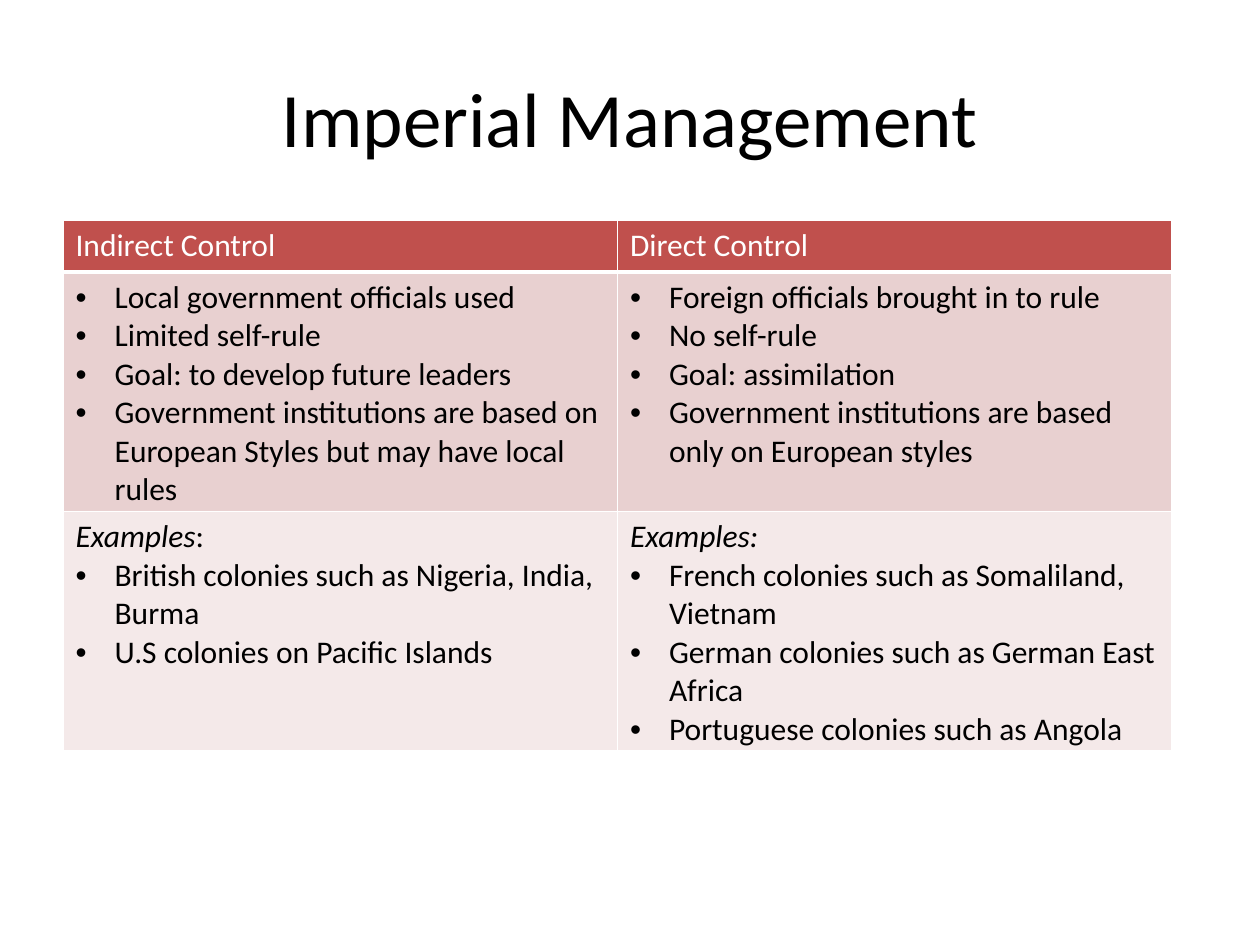
from pptx import Presentation
from pptx.dml.color import RGBColor
from pptx.enum.text import MSO_ANCHOR, PP_ALIGN
from pptx.oxml.ns import qn
from pptx.util import Inches, Pt
from lxml.etree import SubElement

FONT = "Calibri"
BLACK = RGBColor(0x00, 0x00, 0x00)
WHITE = RGBColor(0xFF, 0xFF, 0xFF)
HEADER_RED = RGBColor(0xC0, 0x50, 0x4D)
BAND_DARK = RGBColor(0xE8, 0xD0, 0xD0)
BAND_LIGHT = RGBColor(0xF4, 0xE9, 0xE9)
ROW_FILLS = (HEADER_RED, BAND_DARK, BAND_LIGHT)

ROW_HEIGHT = Inches(0.41)
BULLET_INDENT = Inches(0.31)

# Each cell is (lead runs as (text, italic), bullet texts).
ROWS = [
    [
        ([("Indirect Control", False)], []),
        ([("Direct Control", False)], []),
    ],
    [
        ([], [
            "Local government officials used",
            "Limited self-rule",
            "Goal: to develop future leaders",
            "Government institutions are based on European Styles "
            "but may have local rules",
        ]),
        ([], [
            "Foreign officials brought in to rule",
            "No self-rule",
            "Goal: assimilation",
            "Government institutions are based only on European styles",
        ]),
    ],
    [
        ([("Examples", True), (":", False)], [
            "British colonies such as Nigeria, India, Burma",
            "U.S colonies on Pacific Islands",
        ]),
        ([("Examples:", True)], [
            "French colonies such as Somaliland, Vietnam",
            "German colonies such as German East Africa",
            "Portuguese colonies such as Angola",
        ]),
    ],
]


def add_span(para, text, size, color, italic=False):
    span = para.add_run()
    span.text = text
    span.font.name = FONT
    span.font.size = Pt(size)
    span.font.color.rgb = color
    span.font.bold = False
    span.font.italic = italic


def add_bullet(para):
    properties = para._p.get_or_add_pPr()
    properties.set("marL", str(BULLET_INDENT))
    properties.set("indent", str(-BULLET_INDENT))
    SubElement(properties, qn("a:buFont"), typeface="Arial")
    SubElement(properties, qn("a:buChar"), char="•")


def add_borders(cell, bottom_width):
    properties = cell._tc.get_or_add_tcPr()
    for side, width in zip("LRTB", (1, 1, 1, bottom_width)):
        line = SubElement(properties, qn(f"a:ln{side}"), w=str(Pt(width)))
        fill = SubElement(line, qn("a:solidFill"))
        SubElement(fill, qn("a:srgbClr"), val=str(WHITE))


def fill_cell(cell, lead, bullets, color):
    paragraphs = ([lead] if lead else []) + [[(text, False)] for text in bullets]
    for index, spans in enumerate(paragraphs):
        frame = cell.text_frame
        para = frame.paragraphs[0] if index == 0 else frame.add_paragraph()
        if spans is not lead:
            add_bullet(para)
        for text, italic in spans:
            add_span(para, text, 18, color, italic)


def add_title(page, left, top, width, height):
    box = page.shapes.add_textbox(left, top, width, height)
    frame = box.text_frame
    frame.word_wrap = True
    frame.vertical_anchor = MSO_ANCHOR.MIDDLE
    para = frame.paragraphs[0]
    para.alignment = PP_ALIGN.CENTER
    add_span(para, "Imperial Management", 44, BLACK)


def add_control_table(page, left, top, width, height):
    """Compare the two kinds of control; rows grow to fit their text."""
    graphic = page.shapes.add_table(len(ROWS), len(ROWS[0]), left, top, width, height)
    table = graphic.table
    for row_index, (cells, fill) in enumerate(zip(ROWS, ROW_FILLS)):
        is_header = row_index == 0
        table.rows[row_index].height = ROW_HEIGHT
        for column_index, (lead, bullets) in enumerate(cells):
            cell = table.cell(row_index, column_index)
            add_borders(cell, 3 if is_header else 1)
            cell.fill.solid()
            cell.fill.fore_color.rgb = fill
            fill_cell(cell, lead, bullets, WHITE if is_header else BLACK)
    graphic.height = height


def main():
    deck = Presentation()
    deck.slide_width, deck.slide_height = Inches(10), Inches(7.5)
    page = deck.slides.add_slide(deck.slide_layouts[6])
    margin = int(deck.slide_width * 0.05)
    add_title(page, margin, int(deck.slide_height * 0.04),
              deck.slide_width - 2 * margin, Inches(1.25))
    add_control_table(page, margin, Inches(1.75),
                      int(deck.slide_width * 0.88), Inches(4.21))
    deck.save("out.pptx")


if __name__ == "__main__":
    main()
